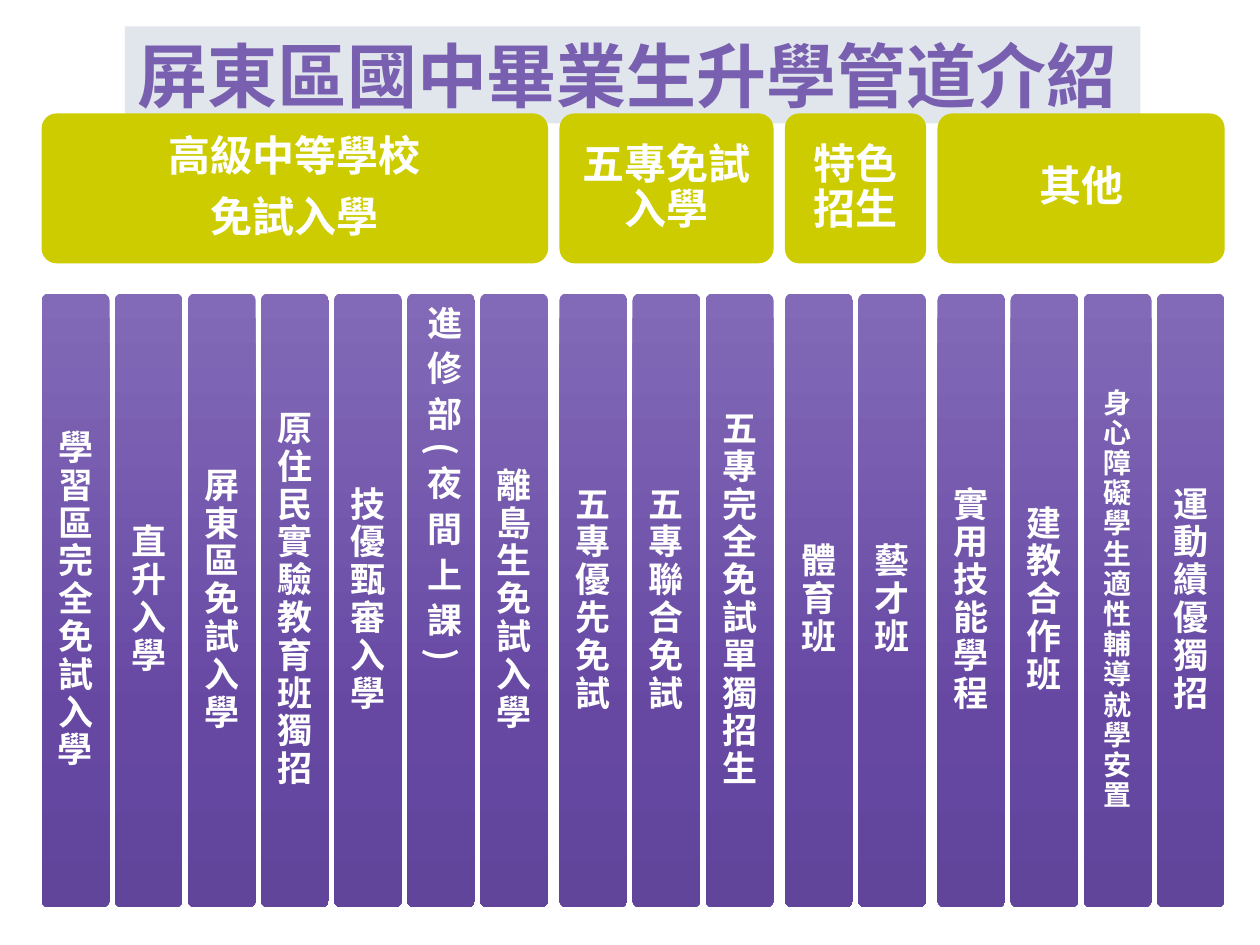
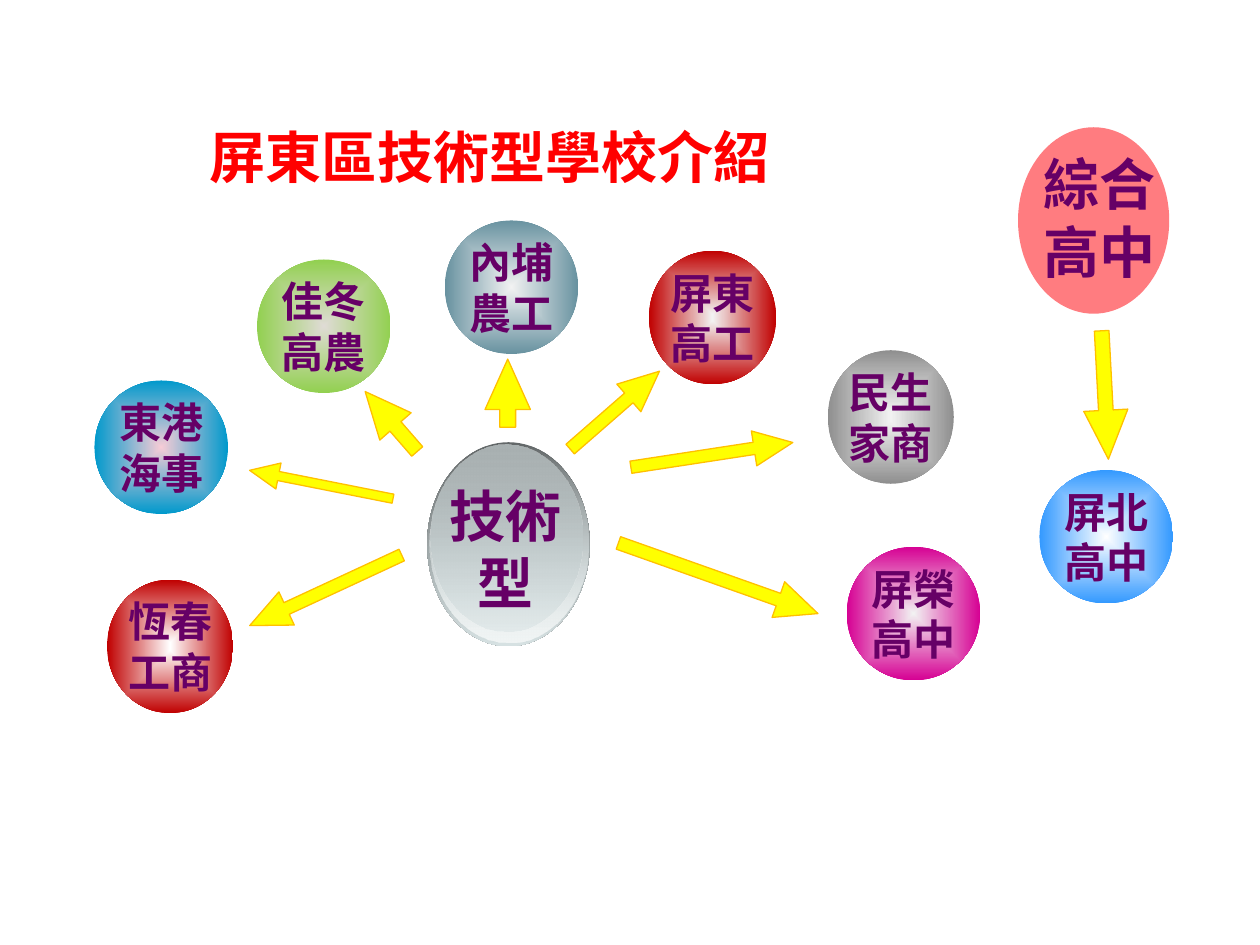
from pptx import Presentation
from pptx.dml.color import RGBColor
from pptx.enum.shapes import MSO_SHAPE
from pptx.enum.text import MSO_ANCHOR, MSO_AUTO_SIZE, PP_ALIGN
from pptx.oxml import parse_xml
from pptx.oxml.ns import nsdecls, qn
from pptx.util import Inches, Pt

ROUND, OVAL, ARROW = MSO_SHAPE.ROUNDED_RECTANGLE, MSO_SHAPE.OVAL, MSO_SHAPE.RIGHT_ARROW
MIDDLE, TOP = MSO_ANCHOR.MIDDLE, MSO_ANCHOR.TOP
LEFT, CENTER = PP_ALIGN.LEFT, PP_ALIGN.CENTER
TITLE_ONLY = 5

FONT = "Noto Sans CJK SC"
WHITE = RGBColor(0xFF, 0xFF, 0xFF)
LAVENDER = RGBColor(0x79, 0x5F, 0xAF)
PALE_BLUE = RGBColor(0xE1, 0xE6, 0xED)
OLIVE = RGBColor(0xCC, 0xCC, 0x00)
RED = RGBColor(0xFF, 0x00, 0x00)
PLUM = RGBColor(0x66, 0x00, 0x66)
YELLOW = RGBColor(0xFF, 0xFF, 0x00)
AMBER = RGBColor(0xFF, 0xC0, 0x00)
CORAL = RGBColor(0xFF, 0x7C, 0x80)
DARK_RED = RGBColor(0xC0, 0x00, 0x00)
GREEN = RGBColor(0x92, 0xD0, 0x50)
TEAL = RGBColor(0x00, 0x99, 0xCC)
SKY = RGBColor(0x33, 0x99, 0xFF)
GREY = RGBColor(0x8F, 0x8F, 0x8F)
SLATE = RGBColor(0x68, 0x92, 0xA0)
MAGENTA = RGBColor(0xD6, 0x00, 0x93)
NEAR_WHITE = RGBColor(0xF2, 0xF2, 0xF2)
BEIGE = RGBColor(0xDF, 0xDB, 0xD5)
PINK = RGBColor(0xF7, 0xCC, 0xD6)
STEEL = RGBColor(0x63, 0x68, 0x69)
SILVER = RGBColor(0xAA, 0xB2, 0xB3)
MIST = RGBColor(0xD6, 0xE1, 0xE2)
FROST = RGBColor(0xF1, 0xF5, 0xF5)

# Gradient stops: position %, colour, opacity %
COLUMN_STOPS = [(0, RGBColor(0x83, 0x6A, 0xB8), 100),
                (69, RGBColor(0x66, 0x48, 0xA3), 100),
                (100, RGBColor(0x60, 0x45, 0x9A), 100)]

# Admission routes: heading lines, then (route, text format) per column
COLUMN_W, COLUMN_PITCH, GROUP_GAP = 0.54, 0.58, 0.05
ROUTES = [
    (["高級中等學校", "免試入學"],
     ["學習區完全免試入學", "直升入學", "屏東區免試入學", "原住民實驗教育班獨招",
      "技優甄審入學", "進修部(夜間上課)", "離島生免試入學"]),
    (["五專免試入學"], ["五專優先免試", "五專聯合免試", "五專完全免試單獨招生"]),
    (["特色招生"], ["體育班", "藝才班"]),
    (["其他"], ["實用技能學程", "建教合作班", "身心障礙學生適性輔導就學安置", "運動績優獨招"]),
]
SMALL_ROUTE = "身心障礙學生適性輔導就學安置"
VERTICAL_ROUTE = "進修部(夜間上課)"

# Technical schools: name lines, centre and rim colours, circle box, arrow box, arrow angle
SCHOOLS = [
    (["佳冬", "高農"], BEIGE, GREEN, (1.29, 0.31, 1.06, 1.06), (2.04, 1.43, 0.63, 0.33), 229),
    (["東港", "海事"], PINK, TEAL, (0, 1.27, 1.06, 1.06), (1.22, 1.99, 1.16, 0.21), 191.2),
    (["屏東", "高工"], NEAR_WHITE, DARK_RED, (4.4, 0.24, 1.01, 1.06),
     (3.66, 1.36, 0.94, 0.29), 318.9),
    (["恆春", "工商"], WHITE, DARK_RED, (0.1, 2.85, 1, 1.06), (1.17, 2.79, 1.33, 0.29), 155.1),
    (["民生", "家商"], NEAR_WHITE, GREY, (5.82, 1.03, 1, 1.06), (4.25, 1.72, 1.3, 0.28), 351.3),
    (["內埔", "農工"], NEAR_WHITE, SLATE, (2.78, 0, 1.06, 1.06), (3.01, 1.19, 0.54, 0.36), 270),
    (["屏榮", "高中"], NEAR_WHITE, MAGENTA, (5.97, 2.59, 1.06, 1.06),
     (4.11, 2.69, 1.68, 0.3), 19.5),
]
HUB_LAYERS = [
    ((2.64, 1.76, 1.29, 1.62), [(0, STEEL, 100), (100, MIST, 100)]),
    ((2.66, 1.77, 1.26, 1.58), [(0, MIST, 0), (100, FROST, 100)]),
    ((2.67, 1.78, 1.2, 1.48), [(0, SILVER, 100), (100, MIST, 48)]),
]


def place(origin, box):
    """Turn a box measured from origin into slide lengths."""
    x, y, w, h = box
    return [Inches(v) for v in (origin[0] + x, origin[1] + y, w, h)]


def add_shape(slide, kind, origin, box, fill=None):
    sp = slide.shapes.add_shape(kind, *place(origin, box))
    sp.shadow.inherit = False
    sp.line.fill.background()
    if fill is not None:
        sp.fill.solid()
        sp.fill.fore_color.rgb = fill
    return sp


def set_gradient(sp, stops, radial=False):
    stop_xml = "".join(
        f'<a:gs pos="{pos * 1000}"><a:srgbClr val="{color}">'
        f'<a:alpha val="{opacity * 1000}"/></a:srgbClr></a:gs>'
        for pos, color, opacity in stops)
    direction = ('<a:path path="shape"><a:fillToRect l="50000" t="50000" r="50000" b="50000"/>'
                 '</a:path>' if radial else '<a:lin ang="5400000" scaled="0"/>')
    sp.fill.background()
    sp_pr = sp._element.spPr
    sp_pr.replace(sp_pr.find(qn("a:noFill")), parse_xml(
        f'<a:gradFill {nsdecls("a")} rotWithShape="1"><a:gsLst>{stop_xml}</a:gsLst>'
        f'{direction}</a:gradFill>'))


def write(sp, lines, size, color, align=CENTER, anchor=MIDDLE, wrap=True, inset=None, **spacing):
    tf = sp.text_frame
    frame = {"word_wrap": wrap, "vertical_anchor": anchor, "auto_size": MSO_AUTO_SIZE.NONE}
    if inset is not None:
        frame.update({f"margin_{side}": Inches(inset)
                      for side in ("left", "top", "right", "bottom")})
    for name, value in frame.items():
        setattr(tf, name, value)
    for i, line in enumerate(lines):
        p = tf.paragraphs[0] if i == 0 else tf.add_paragraph()
        for name, value in {"alignment": align, **spacing}.items():
            setattr(p, name, value)
        r = p.add_run()
        r.text = line
        for name, value in {"name": FONT, "size": Pt(size), "bold": True}.items():
            setattr(r.font, name, value)
        r.font.color.rgb = color
        r._r.rPr.append(parse_xml(f'<a:ea {nsdecls("a")} typeface="{FONT}"/>'))


def add_titled_slide(prs, text, box, size, color, **spacing):
    slide = prs.slides.add_slide(prs.slide_layouts[TITLE_ONLY])
    title = slide.shapes.title
    title.left, title.top, title.width, title.height = place((0, 0), box)
    write(title, [text], size, color, align=LEFT, wrap=False, **spacing)
    return slide


def add_route_group(slide, origin, heading, routes):
    """A heading with one tall column per route below it."""
    width = len(routes) * COLUMN_PITCH - (COLUMN_PITCH - COLUMN_W)
    sp = add_shape(slide, ROUND, origin, (0, 0, width, 1.19), OLIVE)
    sp.adjustments[0] = 0.1
    write(sp, heading, 24, WHITE, inset=0.1, line_spacing=0.9, space_after=Pt(8.4))
    for i, route in enumerate(routes):
        sp = add_shape(slide, ROUND, origin, (i * COLUMN_PITCH, 1.43, COLUMN_W, 4.87))
        sp.adjustments[0] = 0.1
        set_gradient(sp, COLUMN_STOPS)
        size = 16 if route == SMALL_ROUTE else 20
        write(sp, [route], size, WHITE, inset=0.08, line_spacing=0.9, space_after=Pt(size * 0.35))
        if route == VERTICAL_ROUTE:
            sp.text_frame._txBody.bodyPr.set("vert", "eaVert")
            sp.text_frame.paragraphs[0].runs[0]._r.rPr.set("spc", "600")


def add_school(slide, origin, box, lines, center, rim):
    sp = add_shape(slide, OVAL, origin, box)
    set_gradient(sp, [(0, center, 100), (100, rim, 100)], radial=True)
    write(sp, lines, 24, PLUM, wrap=False)


def add_arrow(slide, origin, box, angle, shaft=0.35):
    sp = add_shape(slide, ARROW, origin, box, YELLOW)
    sp.adjustments[0], sp.adjustments[1] = shaft, 1.11
    sp.rotation = angle
    sp.line.color.rgb = AMBER
    sp.line.width = Pt(0.75)


def add_hub_label(slide, origin, box, text):
    write(slide.shapes.add_textbox(*place(origin, box)), [text], 32, PLUM, anchor=TOP)


def add_technical_map(slide, origin):
    for lines, center, rim, circle, arrow, angle in SCHOOLS:
        add_arrow(slide, origin, arrow, angle)
        add_school(slide, origin, circle, lines, center, rim)
    for box, stops in HUB_LAYERS:
        set_gradient(add_shape(slide, OVAL, origin, box), stops)
    add_hub_label(slide, origin, (2.65, 2.02, 1.22, 1.18), "技術型")


def add_comprehensive_map(slide, origin):
    add_shape(slide, OVAL, origin, (0, 0, 1.2, 1.48), CORAL)
    add_hub_label(slide, origin, (0.04, 0.13, 1.22, 1.18), "綜合高中")
    add_arrow(slide, origin, (0.18, 1.95, 1.02, 0.35), 87, shaft=0.33)
    add_school(slide, origin, (0.17, 2.72, 1.06, 1.06), ["屏北", "高中"], WHITE, SKY)


def build_routes_slide(prs):
    slide = add_titled_slide(prs, "屏東區國中畢業生升學管道介紹",
                             (0.99, 0.21, 8.06, 0.77), 40, LAVENDER)
    slide.shapes.title.fill.solid()
    slide.shapes.title.fill.fore_color.rgb = PALE_BLUE
    left = 0.33
    for heading, routes in ROUTES:
        add_route_group(slide, (left, 0.9), heading, routes)
        left += len(routes) * COLUMN_PITCH + GROUP_GAP


def build_schools_slide(prs):
    slide = add_titled_slide(prs, "屏東區技術型學校介紹",
                             (1.56, 0.94, 7.19, 0.67), 32, RED, line_spacing=0.9)
    add_technical_map(slide, (0.75, 1.75))
    add_comprehensive_map(slide, (8.08, 1.01))


def main():
    prs = Presentation()
    prs.slide_width, prs.slide_height = Inches(10), Inches(7.5)
    build_routes_slide(prs)
    build_schools_slide(prs)
    prs.save("out.pptx")


if __name__ == "__main__":
    main()
